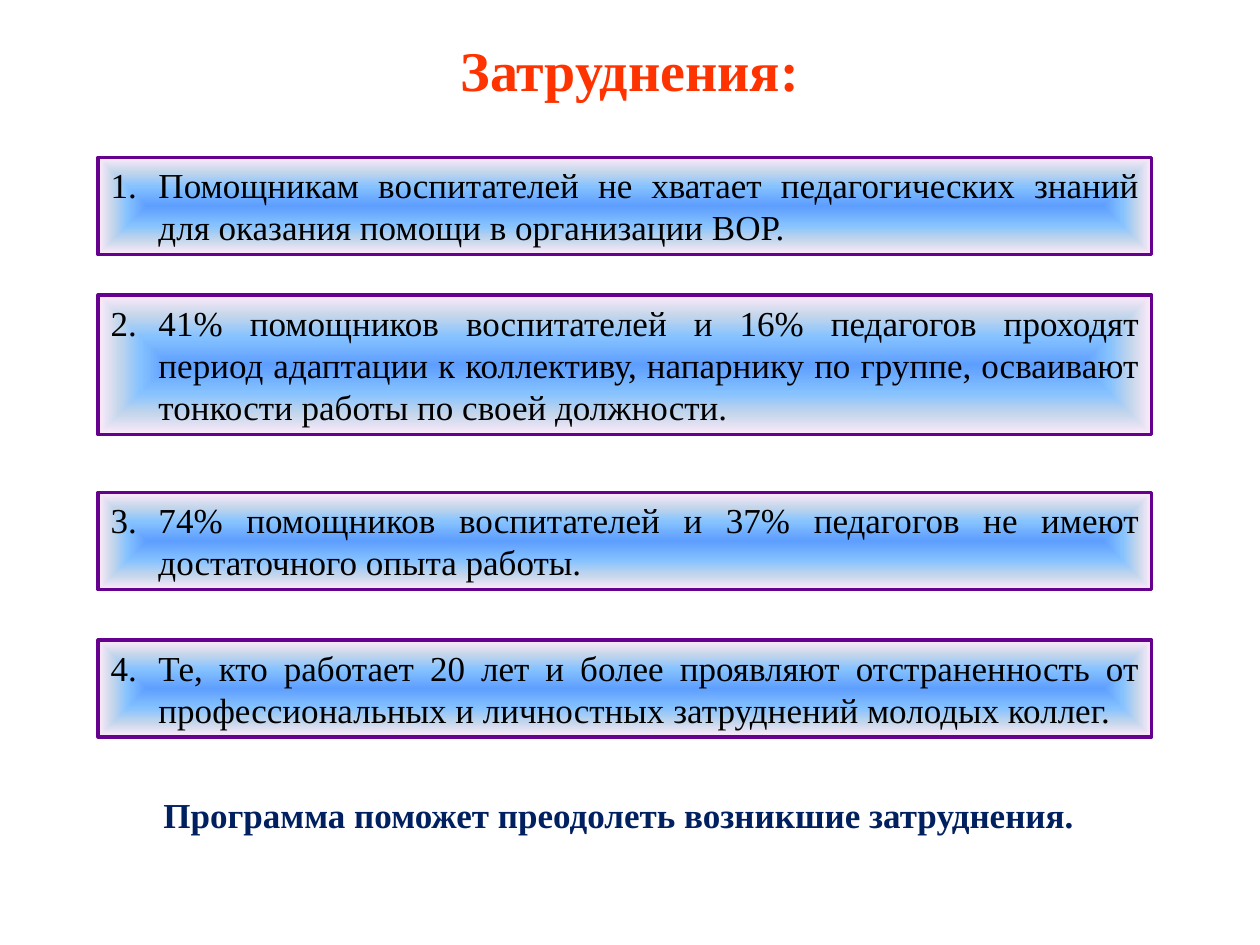
from dataclasses import dataclass

from lxml import etree
from pptx import Presentation
from pptx.dml.color import RGBColor
from pptx.enum.shapes import MSO_SHAPE
from pptx.enum.text import MSO_ANCHOR, MSO_AUTO_SIZE, PP_ALIGN
from pptx.oxml.ns import qn
from pptx.util import Inches, Pt

RECTANGLE = MSO_SHAPE.RECTANGLE
TOP = MSO_ANCHOR.TOP
FIT_SHAPE = MSO_AUTO_SIZE.SHAPE_TO_FIT_TEXT
CENTER, JUSTIFY = PP_ALIGN.CENTER, PP_ALIGN.JUSTIFY


@dataclass(frozen=True)
class Theme:
    font: str = "Times New Roman"
    title_size: int = 32
    body_size: int = 20
    title: str = "FF3300"
    body: str = "000000"
    closing: str = "002060"
    border: str = "66008F"
    border_width: int = 2
    # Position in percent from the centre outwards, colour
    glow: tuple = ((0, "5E9EFF"), (40, "85C2FF"), (70, "C4D6EB"), (100, "FFEBFA"))


class SlideBuilder:
    def __init__(self, slide, theme):
        self.slide = slide
        self.theme = theme

    def add_run(self, p, text, size, color, bold=False):
        r = p.add_run()
        r.text = text
        r.font.name = self.theme.font
        r.font.size = Pt(size)
        r.font.bold = bold
        r.font.color.rgb = RGBColor.from_string(color)

    def heading(self, text, left, top, width, height, size, color):
        box = self.slide.shapes.add_textbox(
            Inches(left), Inches(top), Inches(width), Inches(height))
        tf = box.text_frame
        tf.word_wrap = True
        p = tf.paragraphs[0]
        p.alignment = CENTER
        self.add_run(p, text, size, color, bold=True)

    def glow_fill(self, sp):
        """Fill with a gradient that spreads from the centre to the edges."""
        sp.fill.gradient()
        grad = sp._element.spPr.find(qn("a:gradFill"))
        for child in list(grad):
            grad.remove(child)
        stops = etree.SubElement(grad, qn("a:gsLst"))
        for position, color in self.theme.glow:
            stop = etree.SubElement(stops, qn("a:gs"), pos=str(position * 1000))
            etree.SubElement(stop, qn("a:srgbClr"), val=color)
        shade = etree.SubElement(grad, qn("a:path"), {"path": "shape"})
        etree.SubElement(shade, qn("a:fillToRect"),
                         {side: "50000" for side in "ltrb"})

    def number(self, p, value):
        """Give the paragraph a hanging automatic number."""
        pPr = p._p.get_or_add_pPr()
        indent = Inches(0.38)
        pPr.set("marL", str(indent))
        pPr.set("indent", str(-indent))
        etree.SubElement(pPr, qn("a:buFont"), typeface=self.theme.font)
        etree.SubElement(pPr, qn("a:buAutoNum"),
                         type="arabicPeriod", startAt=str(value))

    def numbered_panel(self, value, text, left, top, width, height):
        sp = self.slide.shapes.add_shape(
            RECTANGLE, Inches(left), Inches(top), Inches(width), Inches(height))
        sp.shadow.inherit = False
        self.glow_fill(sp)
        sp.line.color.rgb = RGBColor.from_string(self.theme.border)
        sp.line.width = Pt(self.theme.border_width)
        tf = sp.text_frame
        tf.word_wrap = True
        tf.auto_size = FIT_SHAPE
        tf.vertical_anchor = TOP
        p = tf.paragraphs[0]
        p.alignment = JUSTIFY
        self.number(p, value)
        self.add_run(p, text, self.theme.body_size, self.theme.body)


# Top, height, text
DIFFICULTIES = [
    (1.25, 0.77, "Помощникам воспитателей не хватает педагогических знаний "
                 "для оказания помощи в организации ВОР."),
    (2.34, 1.11, "41% помощников воспитателей и 16% педагогов проходят период "
                 "адаптации к коллективу, напарнику по группе, осваивают "
                 "тонкости работы по своей должности."),
    (3.91, 0.77, "74% помощников воспитателей и 37% педагогов не имеют "
                 "достаточного опыта работы."),
    (5.08, 0.77, "Те, кто работает 20 лет и более проявляют отстраненность от "
                 "профессиональных и личностных затруднений молодых коллег."),
]


def main():
    prs = Presentation()
    prs.slide_width, prs.slide_height = Inches(10), Inches(7.5)
    theme = Theme()
    s = SlideBuilder(prs.slides.add_slide(prs.slide_layouts[6]), theme)

    s.heading("Затруднения:", 0, 0.23, 10, 0.64, theme.title_size, theme.title)
    for value, (top, height, text) in enumerate(DIFFICULTIES, start=1):
        s.numbered_panel(value, text, 0.78, top, 8.36, height)
    s.heading("Программа поможет преодолеть возникшие затруднения.",
              0.62, 6.25, 8.58, 0.39, theme.body_size, theme.closing)

    prs.save("out.pptx")


if __name__ == "__main__":
    main()
